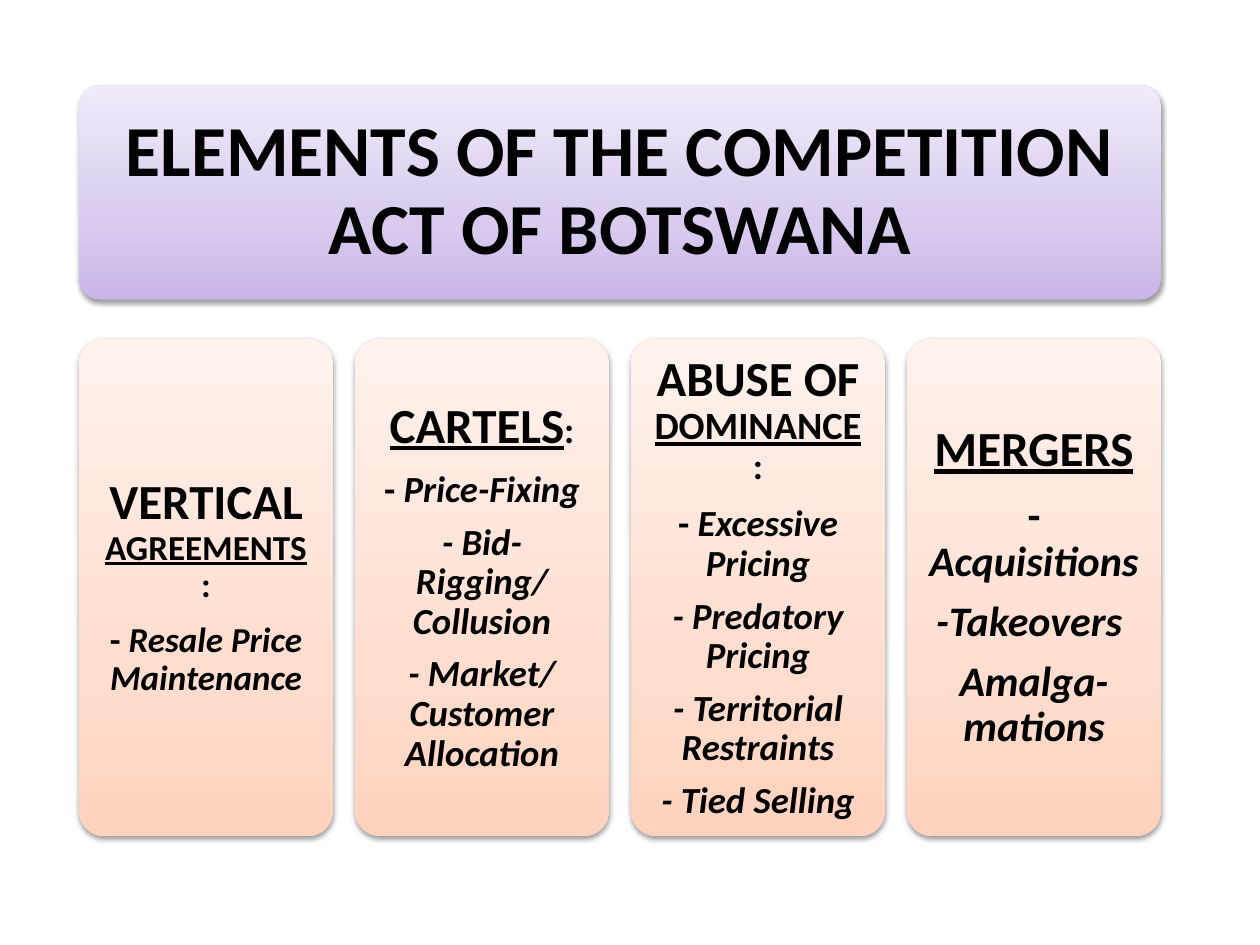
from dataclasses import dataclass

from lxml import etree
from pptx import Presentation
from pptx.dml.color import RGBColor
from pptx.enum.shapes import MSO_SHAPE
from pptx.enum.text import MSO_ANCHOR, PP_ALIGN
from pptx.oxml import parse_xml
from pptx.oxml.ns import nsdecls, qn
from pptx.util import Cm, Pt

ROUNDED = MSO_SHAPE.ROUNDED_RECTANGLE
MIDDLE = MSO_ANCHOR.MIDDLE
CENTER = PP_ALIGN.CENTER


@dataclass(frozen=True)
class Theme:
    font: str = "Calibri"
    text: str = "000000"
    shadow: str = "000000"
    # Gradients run from the bottom edge to the top edge.
    lilac: tuple = ((0, "C9B5E8"), (35, "D8CBEE"), (100, "F0EAF9"))
    peach: tuple = ((0, "FFD2BD"), (35, "FFDED0"), (100, "FFF2ED"))
    title: int = 41
    heading: int = 28


class SlideBuilder:
    def __init__(self, slide, theme):
        self.slide = slide
        self.theme = theme

    def panel(self, left, top, width, height, gradient, inset, paragraphs):
        panel = self.slide.shapes.add_shape(
            ROUNDED, Cm(left), Cm(top), Cm(width), Cm(height))
        panel.adjustments[0] = 0.1
        self.decorate(panel, gradient)
        frame = panel.text_frame
        margins = {f"margin_{side}": Cm(inset)
                   for side in ("left", "top", "right", "bottom")}
        layout = {"word_wrap": True, "vertical_anchor": MIDDLE, **margins}
        for name, value in layout.items():
            setattr(frame, name, value)
        for index, runs in enumerate(paragraphs):
            paragraph = frame.paragraphs[0] if index == 0 else frame.add_paragraph()
            self.fill_paragraph(paragraph, runs)

    def decorate(self, panel, gradient):
        """Give the panel its gradient and soft shadow, without an outline."""
        properties = panel._element.spPr
        stops = "".join(
            f'<a:gs pos="{position * 1000}"><a:srgbClr val="{color}"/></a:gs>'
            for position, color in gradient)
        properties.append(parse_xml(
            f'<a:gradFill {nsdecls("a")} rotWithShape="1"><a:gsLst>{stops}</a:gsLst>'
            '<a:lin ang="16200000" scaled="0"/></a:gradFill>'))
        panel.line.fill.background()
        properties.append(parse_xml(
            f'<a:effectLst {nsdecls("a")}>'
            '<a:outerShdw blurRad="40000" dist="20000" dir="5400000" rotWithShape="0">'
            f'<a:srgbClr val="{self.theme.shadow}"><a:alpha val="38000"/></a:srgbClr>'
            '</a:outerShdw></a:effectLst>'))

    def fill_paragraph(self, paragraph, runs):
        paragraph.alignment = CENTER
        paragraph.line_spacing = 0.9
        space_after = etree.SubElement(
            paragraph._p.get_or_add_pPr(), qn("a:spcAft"))
        etree.SubElement(space_after, qn("a:spcPct"), val="35000")
        for text, size, style in runs:
            run = paragraph.add_run()
            run.text = text
            formats = {"name": self.theme.font, "size": Pt(size), "bold": True,
                       **style}
            for name, value in formats.items():
                setattr(run.font, name, value)
            run.font.color.rgb = RGBColor.from_string(self.theme.text)


PLAIN = {}
ITALIC = {"italic": True}
UNDERLINED = {"underline": True}


def dashed(text, size):
    """An item whose leading dash stays upright."""
    return [("- ", size, PLAIN), (text, size, ITALIC)]


def italic(text, size):
    return [(text, size, ITALIC)]


def main():
    presentation = Presentation()
    presentation.slide_width = Cm(25.4)
    presentation.slide_height = Cm(19.05)
    theme = Theme()
    slide = presentation.slides.add_slide(presentation.slide_layouts[6])
    builder = SlideBuilder(slide, theme)

    left, total_width = 1.59, 21.82
    builder.panel(left, 1.72, total_width, 4.32, theme.lilac, 0.43, [
        [("ELEMENTS OF THE COMPETITION ACT OF BOTSWANA", theme.title, PLAIN)]])

    heading = theme.heading
    elements = [
        [[("VERTICAL", heading, PLAIN), (" ", 20, PLAIN),
          ("AGREEMENTS", 20, UNDERLINED), (":", 20, PLAIN)],
         dashed("Resale Price Maintenance", 20)],
        [[("CARTELS", heading, UNDERLINED), (":", 21, PLAIN)],
         dashed("Price-Fixing", 21),
         italic("- Bid-Rigging/ Collusion", 21),
         italic("- Market/ Customer Allocation", 21)],
        [[("ABUSE OF ", heading, PLAIN), ("DOMINANCE", 22, UNDERLINED),
          (":", 21, PLAIN)],
         dashed("Excessive Pricing", 21),
         italic("- Predatory Pricing", 21),
         italic("- Territorial Restraints", 21),
         italic("- Tied Selling", 21)],
        [[("MERGERS", heading, UNDERLINED)],
         dashed("Acquisitions", 24),
         italic("-Takeovers ", 24),
         italic("Amalga-mations", 24)],
    ]
    column_width = 5.13
    pitch = (total_width - column_width) / (len(elements) - 1)
    for column, paragraphs in enumerate(elements):
        builder.panel(left + column * pitch, 6.83, column_width, 10.03,
                      theme.peach, 0.3, paragraphs)

    presentation.save("out.pptx")


if __name__ == "__main__":
    main()
